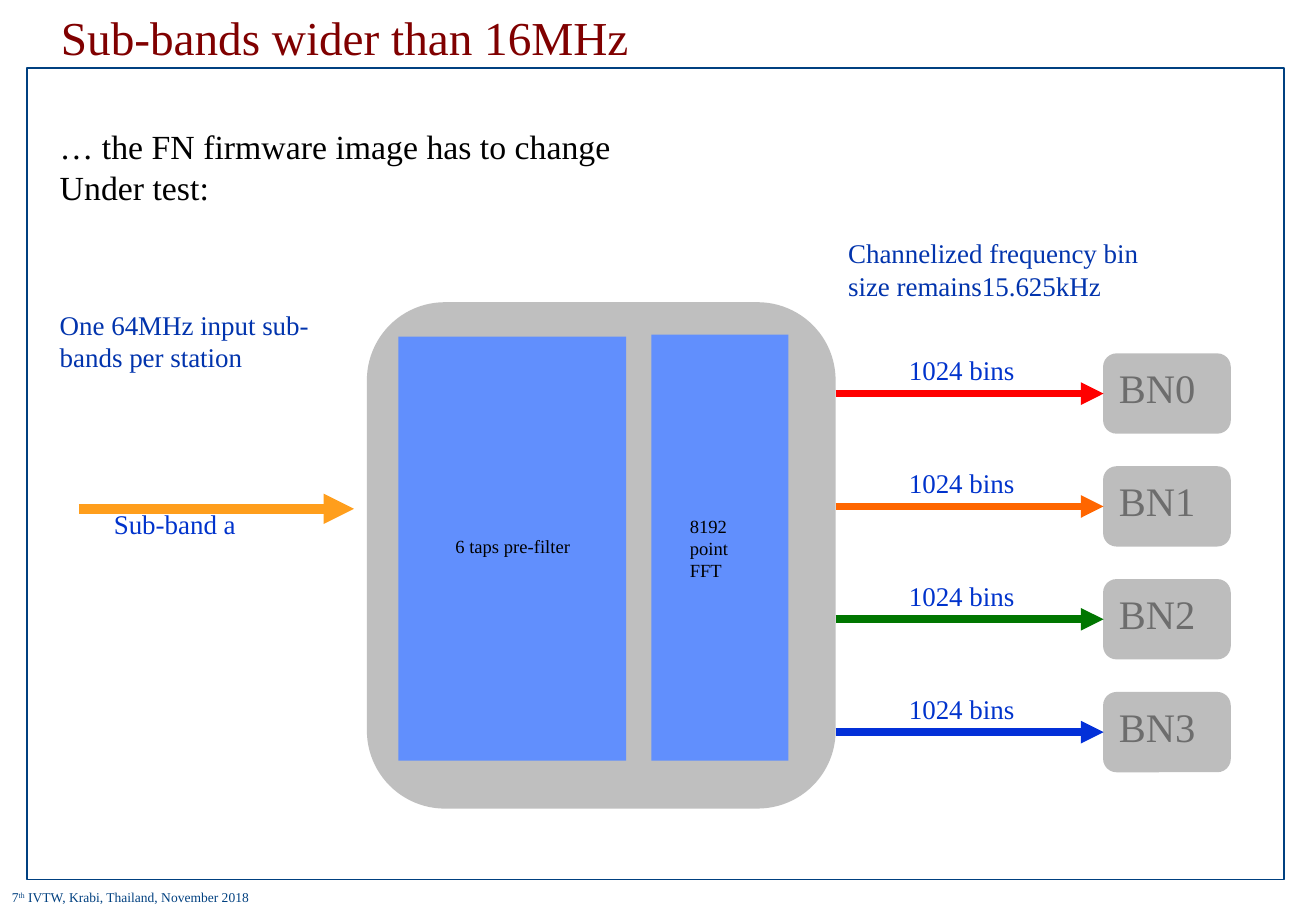
from pptx import Presentation, util as u
from pptx.dml import color as c
from pptx.enum import shapes as s, text as t
from pptx.oxml import ns
from lxml import etree

theme = {
    "font": "Times New Roman",
    "size": {"title": 28, "node": 24, "body": 20, "label": 16, "block": 11, "foot": 8},
    "hue": {
        "title": "800000", "frame": "004080", "text": "000000", "note": "0234AD",
        "label": "0033CC", "chip": "BFBFBF", "stage": "618FFD", "node": "BDBDBD",
        "name": "6D6D6D", "input": "FF9E1C", "page": "FFFFFF",
    },
    "bands": ["FF0000", "FF6600", "007600", "0330D8"],
}
size, hue = theme["size"], theme["hue"]


def style(frame, points, shade):
    frame.word_wrap = True
    for para in frame.paragraphs:
        para.alignment = t.PP_ALIGN.LEFT
        for run in para.runs:
            run.font.name = theme["font"]
            run.font.size = u.Pt(points)
            run.font.color.rgb = c.RGBColor.from_string(shade)


def block(kind, place, fill):
    shape = slide.shapes.add_shape(kind, *map(u.Cm, place))
    shape.shadow.inherit = False
    shape.fill.solid()
    shape.fill.fore_color.rgb = c.RGBColor.from_string(fill)
    shape.line.fill.background()
    shape.text_frame.vertical_anchor = t.MSO_ANCHOR.TOP
    return shape


deck = Presentation()
deck.slide_width, deck.slide_height = u.Cm(27.51), u.Cm(19.05)
slide = deck.slides.add_slide(deck.slide_layouts[5])
rect = s.MSO_SHAPE.RECTANGLE
round_rect = s.MSO_SHAPE.ROUNDED_RECTANGLE

border = block(rect, (0.56, 1.42, 26.29, 16.97), hue["page"])
border.fill.background()
border.line.color.rgb = c.RGBColor.from_string(hue["frame"])
border.line.width = u.Pt(1)

foot = block(rect, (0, 18.47, 8.3, 0.58), hue["page"]).text_frame
for part in ("7", "th", " IVTW, Krabi, Thailand, November 2018"):
    run = foot.paragraphs[0].add_run()
    run.text = part
    if part == "th":
        run.font._element.set("baseline", "30000")
style(foot, size["foot"], hue["frame"])

title = slide.shapes.title
title.left, title.top, title.width, title.height = map(u.Cm, (1.02, 0, 22.8, 1.4))
title.text_frame.text = "Sub-bands wider than 16MHz"
title.text_frame.auto_size = t.MSO_AUTO_SIZE.NONE
title.text_frame.vertical_anchor = t.MSO_ANCHOR.MIDDLE
title.text_frame.paragraphs[0].line_spacing = 1.1
style(title.text_frame, size["title"], hue["title"])

block(round_rect, (7.67, 6.32, 9.8, 10.59), hue["chip"])
block(rect, (8.33, 7.04, 4.76, 8.87), hue["stage"])
block(rect, (13.62, 7, 2.86, 8.91), hue["stage"])

arrows = [(1.65, 7.4, 10.64, 6, hue["input"])]
notes = [
    ((1, 2.51, 15.88, 1.96), "… the FN firmware image has to change\nUnder test:", "body", "text"),
    ((1, 6.32, 6.43, 1.63), "One 64MHz input sub-bands per station", "label", "note"),
    ((17.48, 4.83, 7.34, 1.63), "Channelized frequency bin size remains15.625kHz", "label", "note"),
    ((2.13, 10.49, 3.6, 0.94), "Sub-band a", "label", "label"),
    ((9.27, 11.07, 3.5, 0.74), "6 taps pre-filter", "block", "text"),
    ((14.17, 10.64, 1.8, 1.68), "8192 point FFT", "block", "text"),
]
for i, shade in enumerate(theme["bands"]):
    y = 8.23 + 2.36 * i
    node = block(round_rect, (23.06, y - 0.84, 2.67, 1.68), hue["node"])
    node.text_frame.text = f"BN{i}"
    style(node.text_frame, size["node"], hue["name"])
    arrows.append((17.47, 23.07, y, 4.5, shade))
    notes.append(((18.75, y - 0.96, 3.2, 0.94), "1024 bins", "label", "label"))

for start, end, y, width, shade in arrows:
    arrow = slide.shapes.add_connector(
        s.MSO_CONNECTOR.STRAIGHT, u.Cm(start), u.Cm(y), u.Cm(end), u.Cm(y))
    arrow.line.width = u.Pt(width)
    arrow.line.color.rgb = c.RGBColor.from_string(shade)
    etree.SubElement(arrow.line._get_or_add_ln(), ns.qn("a:tailEnd"), type="triangle")
    etree.SubElement(arrow._element.spPr, ns.qn("a:effectLst"))

for place, words, role, shade in notes:
    box = slide.shapes.add_textbox(*map(u.Cm, place))
    box.text_frame.text = words
    style(box.text_frame, size[role], hue[shade])

deck.save("out.pptx")
